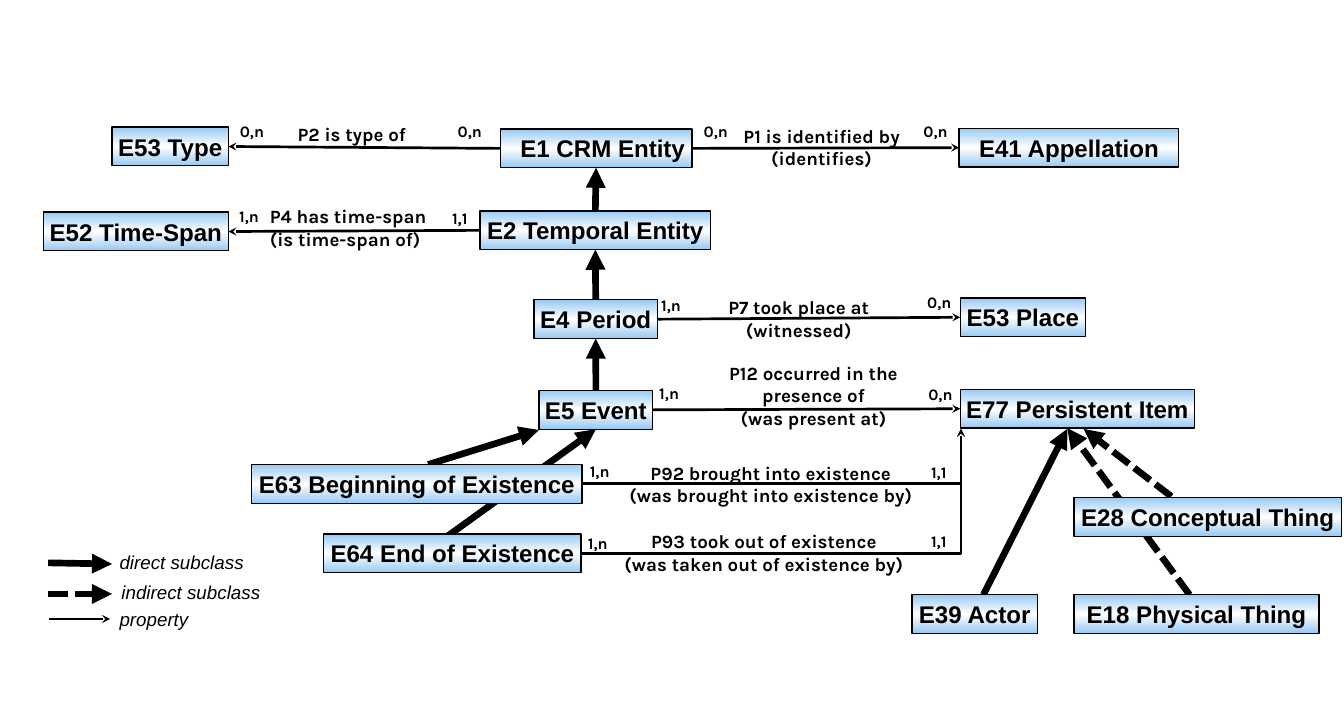
import copy

import lxml.etree
import pptx
import pptx.dml.color
import pptx.enum.dml
import pptx.enum.shapes
import pptx.enum.text
import pptx.oxml.ns
import pptx.util

Cm = pptx.util.Cm
Pt = pptx.util.Pt
LEFT = pptx.enum.text.PP_ALIGN.LEFT
CENTER = pptx.enum.text.PP_ALIGN.CENTER
TOP_SIDE, LEFT_SIDE, BOTTOM_SIDE, RIGHT_SIDE = range(4)
BLACK = "000000"
BOX_HEIGHT = 1.02

# Class boxes: left, top, width
CLASSES = {
    "E1 CRM Entity": (13.18, 3.4, 5.05),
    "E53 Type": (2.95, 3.35, 3.07),
    "E41 Appellation": (25.27, 3.38, 5.79),
    "E2 Temporal Entity": (12.65, 5.56, 6.07),
    "E52 Time-Span": (1.14, 5.59, 4.88),
    "E4 Period": (14.07, 7.9, 3.25),
    "E53 Place": (25.3, 7.85, 3.3),
    "E5 Event": (14.2, 10.29, 3),
    "E77 Persistent Item": (25.3, 10.26, 6.17),
    "E63 Beginning of Existence": (6.63, 12.24, 8.71),
    "E64 End of Existence": (8.53, 14.07, 6.78),
    "E28 Conceptual Thing": (28.3, 13.11, 7.04),
    "E39 Actor": (24.03, 15.67, 3.3),
    "E18 Physical Thing": (28.3, 15.67, 6.45),
}

# Subclass arrows: start, end, dashed; an end is a point or a box name with a side
SUBCLASSES = [
    (("E2 Temporal Entity", TOP_SIDE), ("E1 CRM Entity", BOTTOM_SIDE), False),
    (("E4 Period", TOP_SIDE), ("E2 Temporal Entity", BOTTOM_SIDE), False),
    (("E5 Event", TOP_SIDE), ("E4 Period", BOTTOM_SIDE), False),
    ((11.28, 12.24), (14.2, 11.33), False),
    ((11.66, 14.22), ("E5 Event", BOTTOM_SIDE), False),
    ((25.91, 15.67), (28.12, 11.3), False),
    ((30.86, 13.08), (28.55, 11.3), True),
    ((31.34, 15.67), (28.12, 11.28), True),
]

# Property arrows between box sides
PROPERTIES = [
    (("E1 CRM Entity", LEFT_SIDE), ("E53 Type", RIGHT_SIDE)),
    (("E1 CRM Entity", RIGHT_SIDE), ("E41 Appellation", LEFT_SIDE)),
    (("E2 Temporal Entity", LEFT_SIDE), ("E52 Time-Span", RIGHT_SIDE)),
    (("E4 Period", RIGHT_SIDE), ("E53 Place", LEFT_SIDE)),
    (("E5 Event", RIGHT_SIDE), ("E77 Persistent Item", LEFT_SIDE)),
]
BENT_STARTS = ["E63 Beginning of Existence", "E64 End of Existence"]
BENT_END = (25.32, 11.3)

# Property names: lines, left, top, width, height, alignment
PROPERTY_NAMES = [
    (["P2 is type of"], 7.59, 3.12, 4.04, 0.86, LEFT),
    (["P1 is identified by", "(identifies)"], 19.15, 3.15, 5, 1.45, CENTER),
    (["P4 has time-span", "(is time-span of)"], 6.86, 5.28, 6.22, 1.45, LEFT),
    (["P7 took place at", "(witnessed)"], 19, 7.67, 4.09, 1.45, CENTER),
    (["P12 occurred in the presence of", "(was present at)"],
     18.69, 9.4, 5.49, 2.06, CENTER),
    (["P92 brought into existence", "(was brought into existence by)"],
     15.85, 12.04, 8.92, 1.45, CENTER),
    (["P93 took out of existence", "(was taken out of existence by)"],
     15.85, 13.84, 8.56, 1.45, CENTER),
]

# Cardinalities: text and the left, top of each place
CARDINALITIES = {
    "0,n": [(6.07, 3.07), (11.81, 3.07), (18.29, 3.07), (24.08, 3.07),
            (24.18, 7.59), (24.21, 10.01)],
    "1,n": [(6.05, 5.31), (17.17, 7.67), (17.12, 9.98), (15.29, 12.04),
            (15.24, 13.92)],
    "1,1": [(11.66, 5.36), (24.28, 12.07), (24.28, 13.89)],
}

# Legend: text, its left, top, width, then arrow start, end, thick, dashed
LEGEND = [
    ("direct subclass", 2.9, 14.4, 3.81, (1.27, 14.83), (2.95, 14.86), True, False),
    ("indirect subclass", 2.95, 15.19, 4.19, (1.27, 15.65), (2.95, 15.65), True, True),
    ("property", 2.9, 15.88, 2.34, (1.3, 16.31), (2.9, 16.31), False, False),
]


def color(value):
    return pptx.dml.color.RGBColor.from_string(value)


def write(frame, lines, name, size, align, bold=True, italic=False):
    for number, line in enumerate(lines):
        para = frame.add_paragraph() if number else frame.paragraphs[0]
        para.text = line
        para.alignment = align
        para.font.name = name
        para.font.size = Pt(size)
        para.font.bold = bold
        para.font.italic = italic
        para.font.color.rgb = color(BLACK)


def add_class(page, name, left, top, width):
    box = page.shapes.add_shape(pptx.enum.shapes.MSO_SHAPE.RECTANGLE,
                                Cm(left), Cm(top), Cm(width), Cm(BOX_HEIGHT))
    box.shadow.inherit = False
    box.line.color.rgb = color(BLACK)
    box.line.width = Pt(1)
    # Vertical gradient, white in the middle
    box.fill.gradient()
    box.fill.gradient_angle = 90
    stops = box._element.spPr.find(".//" + pptx.oxml.ns.qn("a:gsLst"))
    stops.append(copy.deepcopy(stops[-1]))
    shades = [(0, "97C9F3"), (0.5, "FFFFFF"), (1, "97C9F3")]
    for stop, (position, shade) in zip(box.fill.gradient_stops, shades):
        stop.position = position
        stop.color.rgb = color(shade)
    frame = box.text_frame
    frame.word_wrap = False
    frame.margin_left = frame.margin_right = Cm(0.15)
    frame.margin_top = frame.margin_bottom = Cm(0.13)
    write(frame, [name], "Arial", 18, CENTER)
    return box


def add_label(page, lines, left, top, width, height, size=14, align=LEFT,
              name="Karla", bold=True, italic=False):
    box = page.shapes.add_textbox(Cm(left), Cm(top), Cm(width), Cm(height))
    frame = box.text_frame
    frame.word_wrap = True
    if align == CENTER:
        frame.margin_left = frame.margin_right = Cm(0.05)
    write(frame, lines, name, size, align, bold, italic)


def add_arrow(page, boxes, start, end, thick=False, dashed=False, bent=False):
    kinds = pptx.enum.shapes.MSO_CONNECTOR
    points = [(0, 0) if isinstance(spot[0], str) else spot for spot in (start, end)]
    arrow = page.shapes.add_connector(kinds.ELBOW if bent else kinds.STRAIGHT,
                                      *(Cm(value) for point in points for value in point))
    for spot, connect in ((start, arrow.begin_connect), (end, arrow.end_connect)):
        if isinstance(spot[0], str):
            connect(boxes[spot[0]], spot[1])
    properties = arrow._element.spPr
    if bent:
        properties.find(pptx.oxml.ns.qn("a:prstGeom")).set("prst", "bentConnector2")
    arrow.line.color.rgb = color(BLACK)
    arrow.line.width = Pt(5 if thick else 2)
    if dashed:
        arrow.line.dash_style = pptx.enum.dml.MSO_LINE.SQUARE_DOT
    head = lxml.etree.SubElement(arrow.line._get_or_add_ln(),
                                 pptx.oxml.ns.qn("a:tailEnd"))
    head.set("type", "triangle" if thick else "stealth")
    lxml.etree.SubElement(properties, pptx.oxml.ns.qn("a:effectLst"))
    return arrow


def main():
    deck = pptx.Presentation()
    deck.slide_width, deck.slide_height = Cm(35.41), Cm(19.05)
    page = deck.slides.add_slide(deck.slide_layouts[6])

    # Classes
    boxes = {name: add_class(page, name, *place) for name, place in CLASSES.items()}
    boxes["E1 CRM Entity"].text_frame.margin_left = Cm(0.5)

    # Subclass arrows, behind the boxes
    for start, end, dashed in SUBCLASSES:
        arrow = add_arrow(page, boxes, start, end, thick=True, dashed=dashed)
        page.shapes._spTree.insert(2, arrow._element)

    # Properties
    for start, end in PROPERTIES:
        add_arrow(page, boxes, start, end)
    for name in BENT_STARTS:
        add_arrow(page, boxes, (name, RIGHT_SIDE), BENT_END, bent=True)
    for lines, left, top, width, height, align in PROPERTY_NAMES:
        add_label(page, lines, left, top, width, height, align=align)
    for text, places in CARDINALITIES.items():
        for left, top in places:
            add_label(page, [text], left, top, 1.37, 0.76, size=12)

    # Legend
    for text, left, top, width, start, end, thick, dashed in LEGEND:
        add_arrow(page, boxes, start, end, thick, dashed)
        add_label(page, [text], left, top, width, 0.86,
                  name="Arial", bold=False, italic=True)

    deck.save("out.pptx")


if __name__ == "__main__":
    main()
